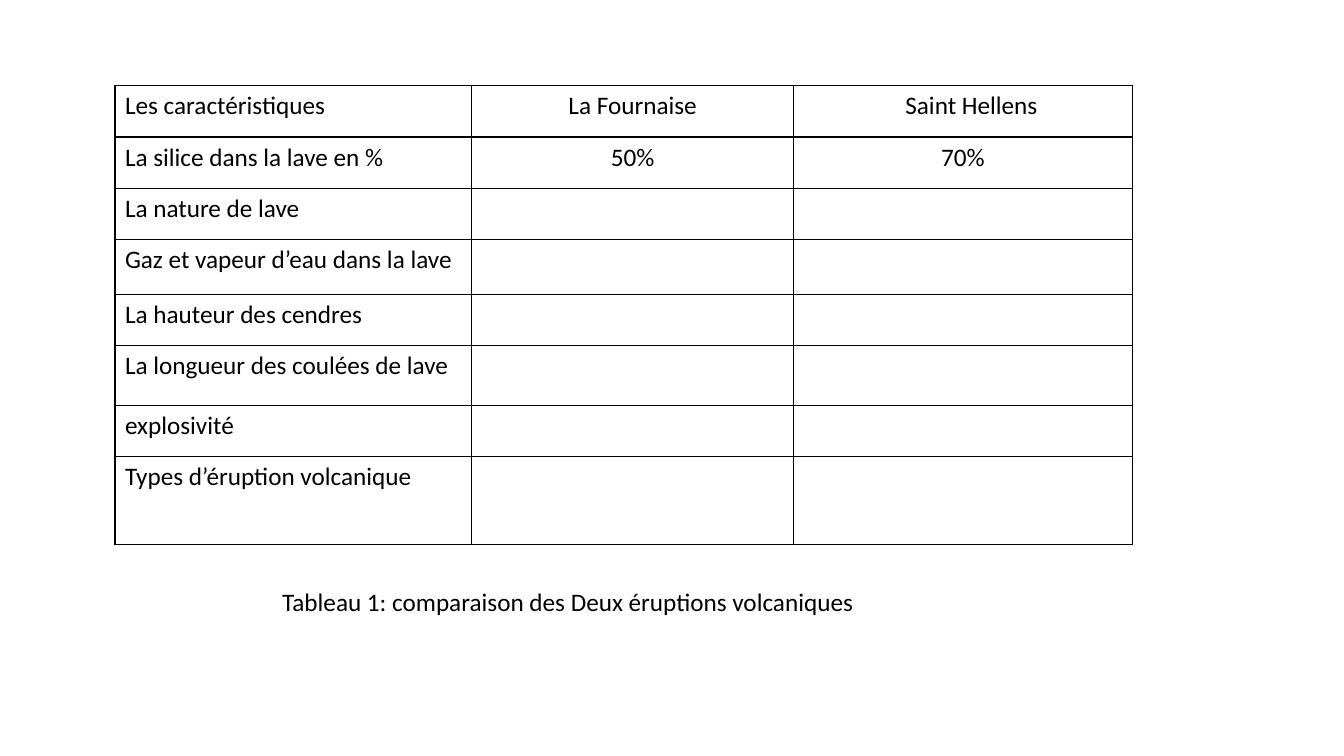
from lxml import etree
from pptx import Presentation
from pptx import util as u
from pptx.dml.color import RGBColor
from pptx.enum import text
from pptx.oxml import ns

INK = {"text": "000000", "line": "000000"}
COLS = [3.54, 3.19, 3.36]
ROWS = [
    (0.51, ["Les caractéristiques", "La Fournaise", "Saint Hellens"]),
    (0.51, ["La silice dans la lave en %", "50%", "70%"]),
    (0.51, ["La nature de lave"]),
    (0.54, ["Gaz et vapeur d’eau dans la lave"]),
    (0.51, ["La hauteur des cendres"]),
    (0.59, ["La longueur des coulées de lave"]),
    (0.51, ["explosivité"]),
    (0.87, ["Types d’éruption volcanique"]),
]


def write(frame, words, size=18, align=text.PP_ALIGN.LEFT, color="text"):
    par = frame.paragraphs[0]
    par.alignment = align
    run = par.add_run()
    run.text = words
    font = run.font
    font.name = "Calibri"
    font.size = u.Pt(size)
    font.bold = False
    font.color.rgb = RGBColor.from_string(INK[color])


def border(cell, width=1):
    props = cell._tc.get_or_add_tcPr()
    for spot, side in enumerate(["lnL", "lnR", "lnT", "lnB"]):
        line = etree.Element(ns.qn("a:" + side), w=str(u.Pt(width)))
        fill = etree.SubElement(line, ns.qn("a:solidFill"))
        etree.SubElement(fill, ns.qn("a:srgbClr"), val=INK["line"])
        props.insert(spot, line)


def grid(slide, left, top, width, height):
    frame = slide.shapes.add_table(
        len(ROWS), len(COLS), u.Inches(left), u.Inches(top),
        u.Inches(width), u.Inches(height))
    table = frame.table
    table.first_row = False
    table.horz_banding = False
    for col, wide in zip(table.columns, COLS):
        col.width = u.Inches(wide)
    for row, (tall, words) in zip(table.rows, ROWS):
        row.height = u.Inches(tall)
        for cell in row.cells:
            cell.fill.background()
            border(cell)
        for spot, (cell, word) in enumerate(zip(row.cells, words)):
            align = text.PP_ALIGN.CENTER if spot else text.PP_ALIGN.LEFT
            write(cell.text_frame, word, align=align)
    table.cell(0, 2).margin_left = u.Inches(0.27)


def label(slide, left, top, width, height):
    box = slide.shapes.add_textbox(
        u.Inches(left), u.Inches(top), u.Inches(width), u.Inches(height))
    frame = box.text_frame
    frame.word_wrap = True
    frame.auto_size = text.MSO_AUTO_SIZE.SHAPE_TO_FIT_TEXT
    write(frame, "Tableau 1: comparaison des Deux éruptions volcaniques")


def main():
    deck = Presentation()
    deck.slide_width = u.Inches(13.33)
    deck.slide_height = u.Inches(7.5)
    slide = deck.slides.add_slide(deck.slide_layouts[6])
    grid(slide, 1.14, 0.85, sum(COLS), sum(tall for tall, _ in ROWS))
    label(slide, 2.7, 5.77, 7.86, 0.4)
    deck.save("out.pptx")


if __name__ == "__main__":
    main()
